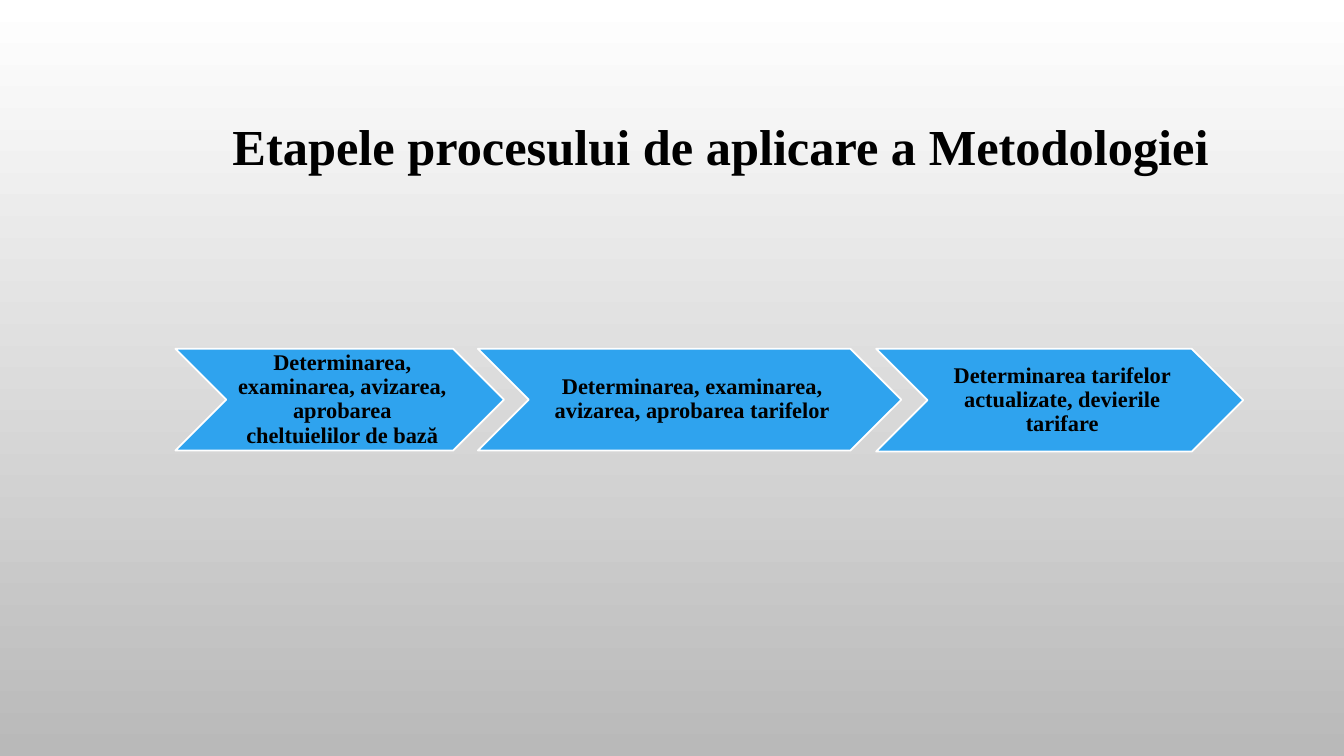
import pptx
import pptx.util
import pptx.dml.color
import pptx.enum.shapes
import pptx.enum.text

Inches, Pt = pptx.util.Inches, pptx.util.Pt
RGBColor = pptx.dml.color.RGBColor

FONT = "Times New Roman"
BLACK = RGBColor(0x00, 0x00, 0x00)
WHITE = RGBColor(0xFF, 0xFF, 0xFF)
GREY = RGBColor(0xB9, 0xB9, 0xB9)
BLUE = RGBColor(0x2F, 0xA3, 0xEE)

# Left, width, height and text of each stage
STAGES = [
    (1.74, 3.26, 1.01, "Determinarea, examinarea, avizarea, aprobarea cheltuielilor de bază"),
    (4.74, 4.2, 1.01, "Determinarea, examinarea, avizarea, aprobarea tarifelor"),
    (8.69, 3.64, 1.02, "Determinarea tarifelor actualizate, devierile tarifare"),
]
STAGE_TOP = 3.46


def set_background(s):
    fill = s.background.fill
    fill.gradient()
    fill.gradient_angle = 270
    for stop, color in zip(fill.gradient_stops, (WHITE, GREY)):
        stop.color.rgb = color


def set_text(tf, text, size):
    tf.text = text
    tf.word_wrap = True
    tf.auto_size = pptx.enum.text.MSO_AUTO_SIZE.NONE
    tf.vertical_anchor = pptx.enum.text.MSO_ANCHOR.MIDDLE
    p = tf.paragraphs[0]
    p.alignment = pptx.enum.text.PP_ALIGN.CENTER
    p.line_spacing = 0.9
    font = p.runs[0].font
    font.name, font.size, font.bold = FONT, Pt(size), True
    font.color.rgb = BLACK


def add_title(s, text):
    sp = s.shapes.title
    sp.left, sp.top = Inches(1.97), Inches(0.68)
    sp.width, sp.height = Inches(10.36), Inches(1.61)
    set_text(sp.text_frame, text, 36)


def add_stage(s, left, width, height, text):
    sp = s.shapes.add_shape(
        pptx.enum.shapes.MSO_SHAPE.CHEVRON,
        Inches(left), Inches(STAGE_TOP), Inches(width), Inches(height))
    sp.shadow.inherit = False
    sp.fill.solid()
    sp.fill.fore_color.rgb = BLUE
    sp.line.color.rgb = WHITE
    sp.line.width = Pt(1.25)
    tf = sp.text_frame
    tf.margin_left = Inches(0.07)
    tf.margin_top = tf.margin_right = tf.margin_bottom = Inches(0.02)
    set_text(tf, text, 16)


def main():
    prs = pptx.Presentation()
    prs.slide_width, prs.slide_height = Inches(13.33), Inches(7.5)
    s = prs.slides.add_slide(prs.slide_layouts[5])  # title only
    set_background(s)
    add_title(s, "Etapele procesului de aplicare a Metodologiei")

    # Process chevrons
    for stage in STAGES:
        add_stage(s, *stage)
    prs.save("out.pptx")


if __name__ == "__main__":
    main()
